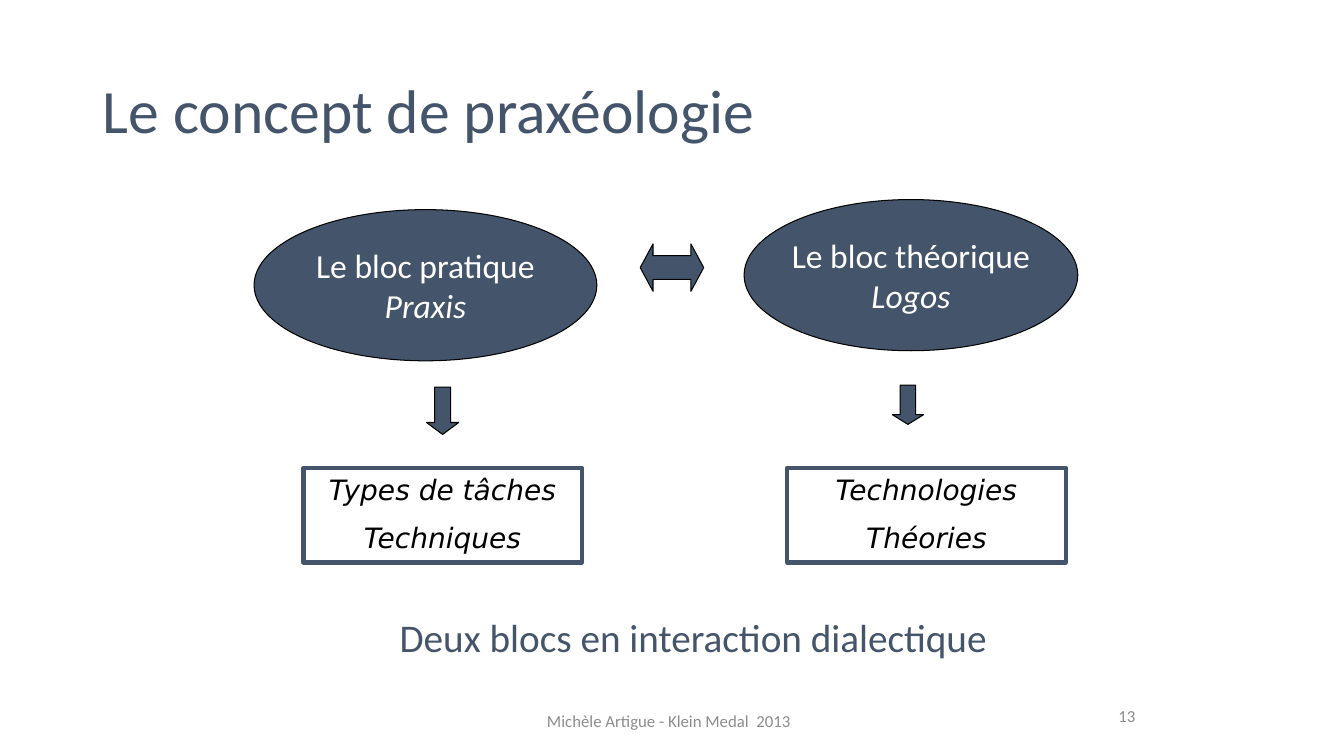
from pptx import Presentation
from pptx.dml.color import RGBColor
from pptx.enum.shapes import MSO_SHAPE as Preset
from pptx.enum.text import MSO_ANCHOR as Anchor, PP_ALIGN as Align
from pptx.util import Inches, Pt

SLATE = RGBColor(0x44, 0x54, 0x6A)
BLACK = RGBColor(0, 0, 0)
WHITE = RGBColor(255, 255, 255)
GREY = RGBColor(0x8C, 0x8C, 0x8C)

TITLE = "Le concept de praxéologie"
BLOCKS = [
    (("Le bloc pratique", "Praxis"), (2.52, 2.08, 3.4, 1.5)),
    (("Le bloc théorique", "Logos"), (7.38, 1.98, 3.31, 1.5)),
]
COMPONENTS = [
    (("Types de tâches", "Techniques"), (3.01, 4.64, 2.76, 0.94)),
    (("Technologies", "Théories"), (7.81, 4.64, 2.76, 0.94)),
]
ARROWS = [
    (Preset.DOWN_ARROW, (4.23, 3.84, 0.32, 0.47), 0.37),
    (Preset.DOWN_ARROW, (8.85, 3.82, 0.31, 0.39), 0.31),
    (Preset.LEFT_RIGHT_ARROW, (6.35, 2.42, 0.63, 0.47), 0.27),
]
CAPTIONS = [
    ("Deux blocs en interaction dialectique", (3.84, 6.04, 6.07, 0.57),
     28, SLATE, Align.CENTER, Anchor.TOP),
    ("Michèle Artigue - Klein Medal  2013", (5.05, 6.95, 3.17, 0.4),
     12, GREY, Align.CENTER, Anchor.MIDDLE),
    ("13", (9.03, 6.9, 2.33, 0.4), 12, GREY, Align.RIGHT, Anchor.MIDDLE),
]


def inches(box):
    """Convert left, top, width and height to lengths."""
    return [Inches(value) for value in box]


def write(holder, lines, size, color, align, anchor,
          font="Calibri", italics=(False, True), gap=0, wrap=True):
    """Write one formatted paragraph per line."""
    frame = holder.text_frame
    frame.word_wrap = wrap
    frame.vertical_anchor = anchor
    frame.text = "\n".join(lines)
    for index, (paragraph, italic) in enumerate(zip(frame.paragraphs, italics)):
        paragraph.alignment = align
        paragraph.space_before = Pt(gap if index else 0)
        look = {"name": font, "size": Pt(size), "italic": italic}
        for key, value in look.items():
            setattr(paragraph.font, key, value)
        paragraph.font.color.rgb = color


def draw(slide, preset, box, line, weight, fill=None):
    """Draw a flat preset shape."""
    shape = slide.shapes.add_shape(preset, *inches(box))
    shape.shadow.inherit = False
    if fill is None:
        shape.fill.background()
    else:
        shape.fill.solid()
        shape.fill.fore_color.rgb = fill
    shape.line.color.rgb = line
    shape.line.width = Pt(weight)
    return shape


def main():
    """Build the slide on praxeology."""
    deck = Presentation()
    deck.slide_width, deck.slide_height = Inches(13.33), Inches(7.5)
    slide = deck.slides.add_slide(deck.slide_layouts[5])

    title = slide.shapes.title
    title.left, title.top, title.width, title.height = inches((0.92, 0.4, 11.5, 1.45))
    write(title, [TITLE], 44, SLATE, Align.LEFT, Anchor.MIDDLE)
    title.text_frame.paragraphs[0].line_spacing = 0.9

    for lines, box in BLOCKS:
        block = draw(slide, Preset.OVAL, box, BLACK, 0.75, SLATE)
        write(block, lines, 24, WHITE, Align.CENTER, Anchor.MIDDLE, wrap=False)

    for lines, box in COMPONENTS:
        component = draw(slide, Preset.RECTANGLE, box, SLATE, 3)
        write(component, lines, 20, BLACK, Align.CENTER, Anchor.TOP,
              font="DejaVu Sans", italics=(True, True), gap=10)

    for preset, box, head in ARROWS:
        arrow = draw(slide, preset, box, BLACK, 0.75, SLATE)
        arrow.adjustments[1] = head

    for text, box, *style in CAPTIONS:
        write(slide.shapes.add_textbox(*inches(box)), [text], *style)

    deck.save("out.pptx")


if __name__ == "__main__":
    main()
